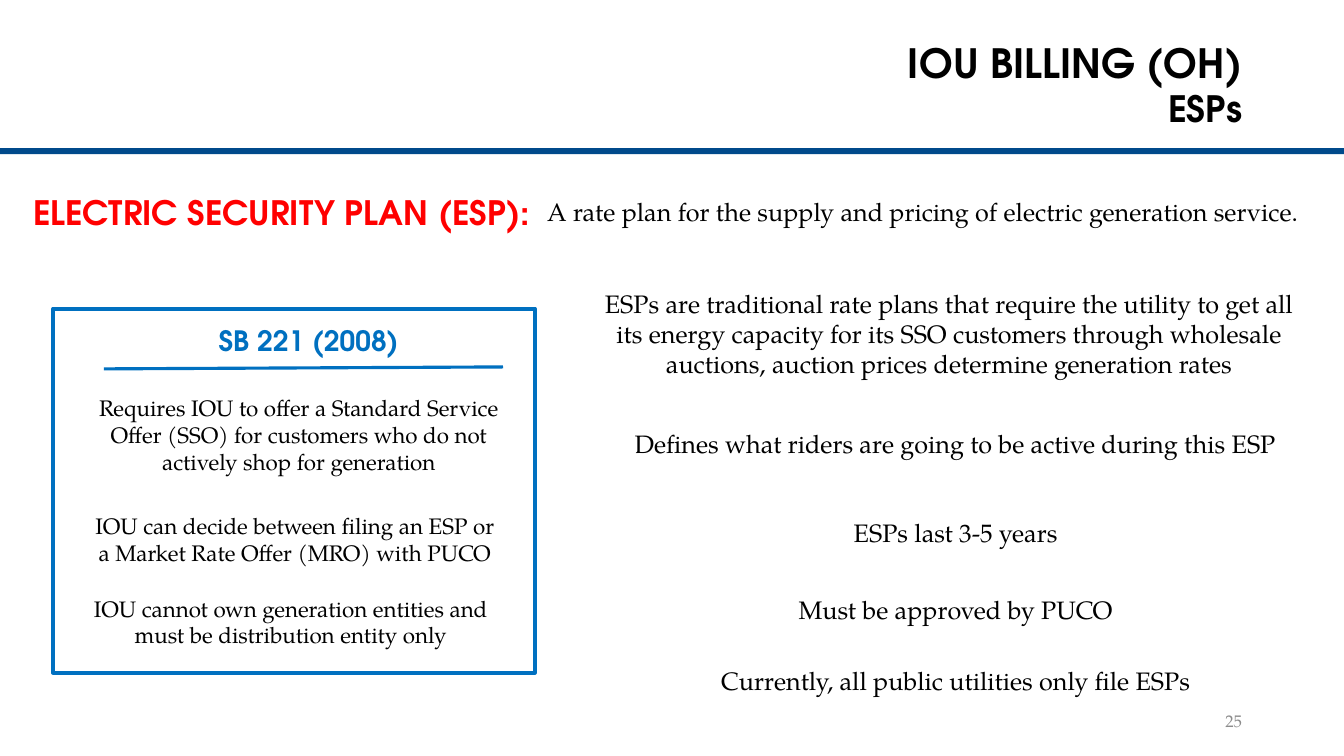
from pptx import Presentation
from pptx.dml.color import RGBColor
from pptx.enum.shapes import MSO_CONNECTOR, MSO_SHAPE
from pptx.enum.text import MSO_ANCHOR, PP_ALIGN
from pptx.oxml.ns import qn
from pptx.util import Pt
from lxml import etree

COLORS = {
    "navy": "004A8B",
    "blue": "0070C0",
    "red": "FF0000",
    "black": "000000",
    "gray": "8C8C8C",
}
HEADING_FONT = "TeX Gyre Adventor"
BODY_FONT = "TeX Gyre Pagella"


def color(name):
    return RGBColor.from_string(COLORS[name])


def add_text(slide, box, text, size, fill="black", align=PP_ALIGN.CENTER,
             heading=False, anchor=MSO_ANCHOR.TOP, spacing=None):
    shape = slide.shapes.add_textbox(*map(Pt, box))
    frame = shape.text_frame
    frame.word_wrap = True
    frame.vertical_anchor = anchor
    paragraph = frame.paragraphs[0]
    paragraph.text = text
    paragraph.alignment = align
    if spacing:
        paragraph.line_spacing = spacing
    font = paragraph.font
    font.name = HEADING_FONT if heading else BODY_FONT
    font.size = Pt(size)
    font.bold = heading
    font.color.rgb = color(fill)


def add_rectangle(slide, box, fill=None, line=None, width=0):
    shape = slide.shapes.add_shape(MSO_SHAPE.RECTANGLE, *map(Pt, box))
    shape.shadow.inherit = False
    if fill:
        shape.fill.solid()
        shape.fill.fore_color.rgb = color(fill)
    else:
        shape.fill.background()
    if line:
        shape.line.color.rgb = color(line)
        shape.line.width = Pt(width)
    else:
        shape.line.fill.background()


def add_line(slide, ends, line, width):
    connector = slide.shapes.add_connector(MSO_CONNECTOR.STRAIGHT, *map(Pt, ends))
    connector.line.color.rgb = color(line)
    connector.line.width = Pt(width)
    etree.SubElement(connector._element.spPr, qn("a:effectLst"))


def add_header(slide):
    add_rectangle(slide, (0, 105.8, 960, 4.3), fill="navy")
    add_text(slide, (136, 28.8, 758.3, 35.3), "IOU BILLING (OH)", 28.8,
             align=PP_ALIGN.RIGHT, heading=True, anchor=MSO_ANCHOR.MIDDLE, spacing=0.9)
    add_text(slide, (136, 64.1, 758.3, 33.1), "ESPs", 25.9,
             align=PP_ALIGN.RIGHT, heading=True, spacing=0.8)


def add_definition(slide):
    add_text(slide, (16.5, 133.2, 383, 36), "ELECTRIC SECURITY PLAN (ESP):", 24,
             "red", PP_ALIGN.LEFT, heading=True)
    add_text(slide, (370, 136.8, 578.2, 29),
             "A rate plan for the supply and pricing of electric generation service.", 18)


def add_law_panel(slide):
    add_rectangle(slide, (38, 220.5, 344, 260), line="blue", width=3)
    add_text(slide, (149, 227.5, 180.7, 31.7), "SB 221 (2008)", 20,
             "blue", PP_ALIGN.LEFT, heading=True)
    add_line(slide, (74.2, 263.5, 359.3, 262.1), "blue", 2.25)
    provisions = [
        ((57.6, 277.9, 311.8, 65.5),
         "Requires IOU to offer a Standard Service Offer (SSO) for customers "
         "who do not actively shop for generation"),
        ((57.6, 362.2, 306, 46),
         "IOU can decide between filing an ESP or a Market Rate Offer (MRO) with PUCO"),
        ((51.8, 421.2, 311.8, 46),
         "IOU cannot own generation entities and must be distribution entity only"),
    ]
    for box, text in provisions:
        add_text(slide, box, text, 16)


def add_plan_facts(slide):
    facts = [
        ((423.4, 202.3, 509, 72.7),
         "ESPs are traditional rate plans that require the utility to get all its "
         "energy capacity for its SSO customers through wholesale auctions, "
         "auction prices determine generation rates"),
        ((437.8, 302.4, 488.9, 29),
         "Defines what riders are going to be active during this ESP"),
        ((470.9, 365.8, 423.4, 29), "ESPs last 3-5 years"),
        ((470.9, 421.2, 423.4, 29), "Must be approved by PUCO"),
        ((470.9, 471.6, 423.4, 29), "Currently, all public utilities only file ESPs"),
    ]
    for box, text in facts:
        add_text(slide, box, text, 18)


def main():
    presentation = Presentation()
    presentation.slide_width, presentation.slide_height = Pt(960), Pt(540)
    slide = presentation.slides.add_slide(presentation.slide_layouts[6])
    add_header(slide)
    add_definition(slide)
    add_law_panel(slide)
    add_plan_facts(slide)
    # Slide number
    add_text(slide, (678.3, 500.5, 216, 28.8), "25", 12, "gray",
             PP_ALIGN.RIGHT, anchor=MSO_ANCHOR.MIDDLE)
    presentation.save("out.pptx")


if __name__ == "__main__":
    main()
